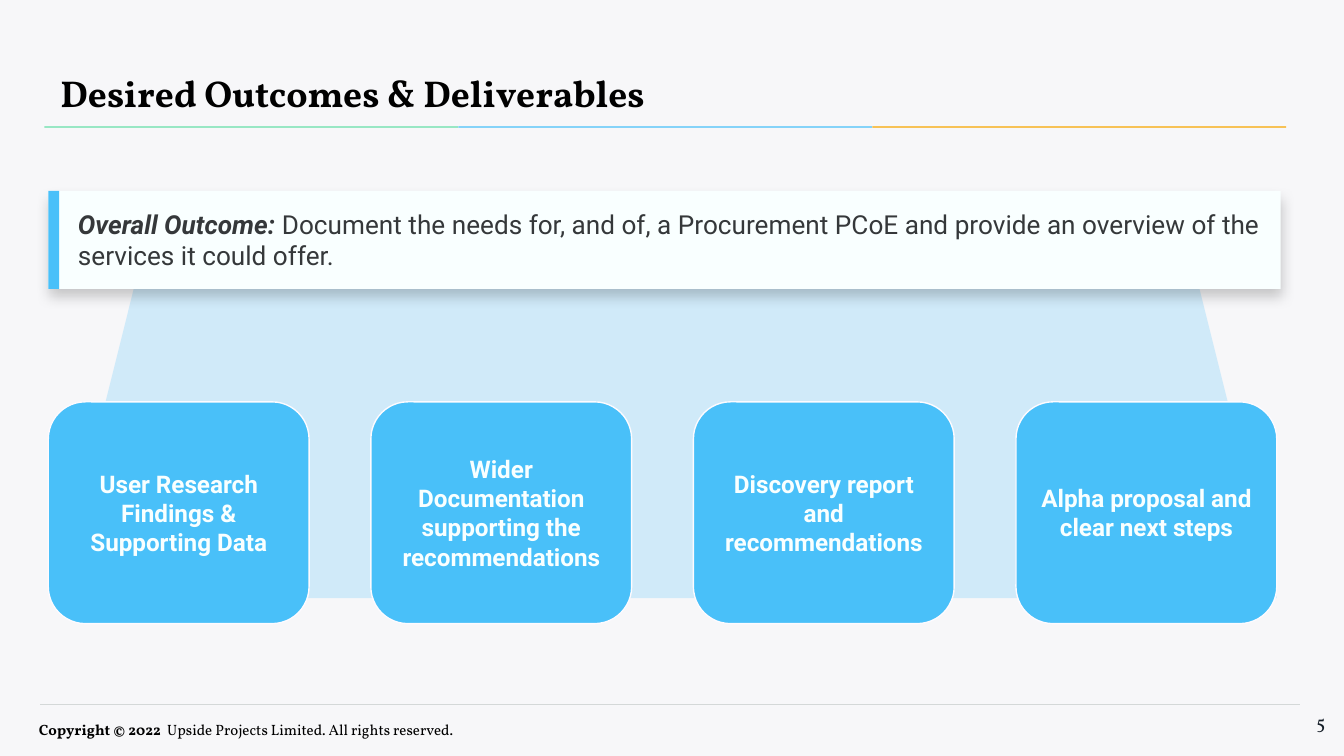
from dataclasses import dataclass
from typing import Optional

from lxml.etree import SubElement
from pptx import Presentation
from pptx.dml.color import RGBColor
from pptx.enum.shapes import MSO_CONNECTOR, MSO_SHAPE
from pptx.enum.text import MSO_ANCHOR, MSO_AUTO_SIZE, PP_ALIGN
from pptx.oxml.ns import qn
from pptx.shapes.autoshape import Shape
from pptx.slide import Slide
from pptx.text.text import TextFrame
from pptx.util import Inches, Pt


@dataclass(frozen=True)
class Theme:
    background: str = "F7F7F9"
    blue: str = "49C0F9"
    green: str = "66DFA9"
    amber: str = "F8A700"
    paper: str = "F9FFFF"
    card_border: str = "FDFBFF"
    rule: str = "D4D8D8"
    black: str = "000000"
    body: str = "35383A"
    number: str = "151E28"
    heading_font: str = "Vollkorn"
    body_font: str = "Roboto"
    title_size: float = 20
    outcome_size: float = 14
    card_size: float = 13
    number_size: float = 10
    footer_size: float = 8


@dataclass(frozen=True)
class Box:
    left: float
    top: float
    width: float
    height: float

    def lengths(self) -> tuple:
        return tuple(Inches(n) for n in (self.left, self.top, self.width, self.height))


@dataclass(frozen=True)
class Span:
    text: str
    bold: bool = False
    italic: bool = False


@dataclass(frozen=True)
class TextStyle:
    font: str
    size: float
    color: str
    align: PP_ALIGN = PP_ALIGN.LEFT
    anchor: MSO_ANCHOR = MSO_ANCHOR.TOP
    margins: tuple = (0.1, 0.1, 0.1, 0.1)
    line_spacing: float = 1.0


THEME = Theme()
SLIDE_WIDTH = 10
SLIDE_HEIGHT = SLIDE_WIDTH * 9 / 16
DELIVERABLES = (
    "User Research Findings & Supporting Data",
    "Wider Documentation supporting the recommendations",
    "Discovery report and recommendations",
    "Alpha proposal and clear next steps",
)
CARD = Box(0.36, 2.99, 1.94, 1.65)
CARD_PITCH = 2.4
STRIPE = Box(0.33, 0.94, 3.08, 0.01)
OUTCOME = Box(0.36, 1.42, 9.17, 0.73)


def write_text(frame: TextFrame, spans: list[Span], style: TextStyle) -> None:
    frame.word_wrap = True
    frame.auto_size = MSO_AUTO_SIZE.NONE
    frame.vertical_anchor = style.anchor
    frame.margin_left, frame.margin_top, frame.margin_right, frame.margin_bottom = (
        Inches(margin) for margin in style.margins
    )
    paragraph = frame.paragraphs[0]
    paragraph.alignment = style.align
    paragraph.line_spacing = style.line_spacing
    paragraph.font.name = style.font
    paragraph.font.size = Pt(style.size)
    paragraph.font.color.rgb = RGBColor.from_string(style.color)
    if len(spans) == 1:
        paragraph.font.bold = spans[0].bold
    for span in spans:
        run = paragraph.add_run()
        run.text = span.text
        if len(spans) > 1:
            run.font.bold = span.bold
            run.font.italic = span.italic


def add_panel(slide: Slide, kind: MSO_SHAPE, box: Box, fill: str, border: Optional[str] = None) -> Shape:
    shape = slide.shapes.add_shape(kind, *box.lengths())
    shape.shadow.inherit = False
    shape.fill.solid()
    shape.fill.fore_color.rgb = RGBColor.from_string(fill)
    if border:
        shape.line.color.rgb = RGBColor.from_string(border)
        shape.line.width = Pt(0.75)
    else:
        shape.line.fill.background()
    return shape


def add_label(slide: Slide, box: Box, spans: list[Span], style: TextStyle) -> None:
    write_text(slide.shapes.add_textbox(*box.lengths()).text_frame, spans, style)


def set_opacity(shape: Shape, percent: int) -> None:
    color = shape._element.spPr.find(qn("a:solidFill"))[0]
    SubElement(color, qn("a:alpha"), val=str(percent * 1000))


def add_drop_shadow(shape: Shape) -> None:
    effects = shape._element.spPr.find(qn("a:effectLst"))
    shadow = SubElement(
        effects, qn("a:outerShdw"), blurRad=str(Pt(6.8)), dist=str(Pt(3.8)),
        dir="5400000", algn="bl", rotWithShape="0",
    )
    color = SubElement(shadow, qn("a:srgbClr"), val=THEME.black)
    SubElement(color, qn("a:alpha"), val="20000")


def add_footer(slide: Slide) -> None:
    rule = slide.shapes.add_connector(
        MSO_CONNECTOR.STRAIGHT, Inches(0.3), Inches(5.24), Inches(9.67), Inches(5.24)
    )
    rule.line.color.rgb = RGBColor.from_string(THEME.rule)
    rule.line.width = Pt(0.75)
    SubElement(rule._element.spPr, qn("a:effectLst"))
    add_label(
        slide, Box(0.19, 5.29, 6.02, 0.24),
        [Span("Copyright © 2022  ", bold=True), Span("Upside Projects Limited. All rights reserved.")],
        TextStyle(THEME.heading_font, THEME.footer_size, THEME.black,
                  margins=(0.1, 0.05, 0.1, 0.05), line_spacing=1.2),
    )
    add_label(
        slide, Box(9.36, 5.19, 0.6, 0.43), [Span("5")],
        TextStyle(THEME.heading_font, THEME.number_size, THEME.number, PP_ALIGN.RIGHT),
    )


def add_heading(slide: Slide) -> None:
    title = slide.shapes.title
    title.left, title.top, title.width, title.height = Box(0.41, 0.48, 6.76, 0.38).lengths()
    write_text(
        title.text_frame, [Span("Desired Outcomes & Deliverables", bold=True)],
        TextStyle(THEME.heading_font, THEME.title_size, THEME.black, margins=(0.04,) * 4),
    )
    for index, color in enumerate((THEME.green, THEME.blue, THEME.amber)):
        left = STRIPE.left + index * STRIPE.width
        add_panel(slide, MSO_SHAPE.RECTANGLE, Box(left, STRIPE.top, STRIPE.width, STRIPE.height), color)


def add_outcome(slide: Slide) -> None:
    panel = add_panel(slide, MSO_SHAPE.RECTANGLE, OUTCOME, THEME.paper)
    add_drop_shadow(panel)
    write_text(
        panel.text_frame,
        [
            Span("Overall Outcome: ", bold=True, italic=True),
            Span("Document the needs for, and of, a Procurement PCoE and provide "
                 "an overview of the services it could offer."),
        ],
        TextStyle(THEME.body_font, THEME.outcome_size, THEME.body,
                  anchor=MSO_ANCHOR.MIDDLE, margins=(0.22, 0.1, 0.1, 0.1)),
    )
    accent = Box(OUTCOME.left, OUTCOME.top, 0.08, OUTCOME.height)
    add_panel(slide, MSO_SHAPE.RECTANGLE, accent, THEME.blue)


def add_deliverables(slide: Slide) -> None:
    style = TextStyle(THEME.body_font, THEME.card_size, THEME.paper, PP_ALIGN.CENTER, MSO_ANCHOR.MIDDLE)
    for index, text in enumerate(DELIVERABLES):
        box = Box(CARD.left + index * CARD_PITCH, CARD.top, CARD.width, CARD.height)
        card = add_panel(slide, MSO_SHAPE.ROUNDED_RECTANGLE, box, THEME.blue, THEME.card_border)
        write_text(card.text_frame, [Span(text, bold=True)], style)


def main() -> None:
    presentation = Presentation()
    presentation.slide_width = Inches(SLIDE_WIDTH)
    presentation.slide_height = Inches(SLIDE_HEIGHT)
    slide = presentation.slides.add_slide(presentation.slide_layouts[5])
    slide.background.fill.solid()
    slide.background.fill.fore_color.rgb = RGBColor.from_string(THEME.background)
    add_footer(slide)
    backdrop = add_panel(slide, MSO_SHAPE.TRAPEZOID, Box(0.42, 2.15, 9.08, 2.3), THEME.blue)
    set_opacity(backdrop, 22)
    add_outcome(slide)
    add_heading(slide)
    add_deliverables(slide)
    presentation.save("out.pptx")


if __name__ == "__main__":
    main()
